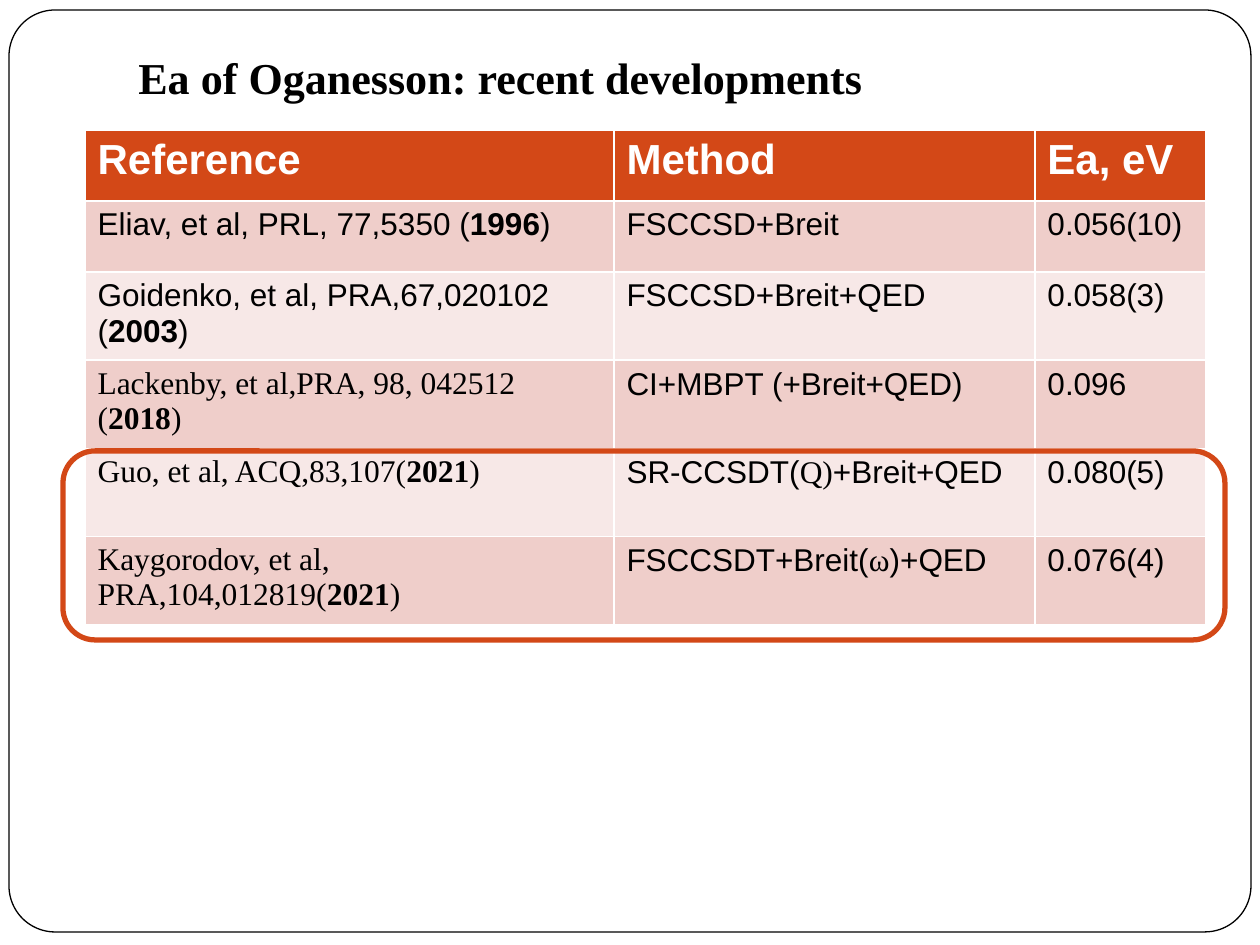
from pptx import Presentation
from pptx.dml.color import RGBColor
from pptx.enum.shapes import MSO_SHAPE as SHAPE
from pptx.enum.text import MSO_ANCHOR as ANCHOR
from pptx.util import Pt

PX = 914400 // 126
BLACK = RGBColor(0x00, 0x00, 0x00)
WHITE = RGBColor(0xFF, 0xFF, 0xFF)
ORANGE = RGBColor(0xD3, 0x48, 0x17)
ROSE = RGBColor(0xEF, 0xCE, 0xCA)
PALE = RGBColor(0xF7, 0xE8, 0xE7)
SANS, SERIF = "Arial", "Times New Roman"

HEADERS = ["Reference", "Method", "Ea, eV"]
ROWS = [
    (SANS, "Eliav, et al, PRL, 77,5350 (", "1996", ["FSCCSD+Breit"], "0.056(10)"),
    (SANS, "Goidenko, et al, PRA,67,020102 (", "2003", ["FSCCSD+Breit+QED"], "0.058(3)"),
    (SERIF, "Lackenby, et al,PRA, 98, 042512 (", "2018", ["CI+MBPT (+Breit+QED)"], "0.096"),
    (SERIF, "Guo, et al, ACQ,83,107(", "2021", ["SR-CCSDT(", "Q)", "+Breit+QED"], "0.080(5)"),
    (SERIF, "Kaygorodov, et al, PRA,104,012819(", "2021", ["FSCCSDT+Breit(", "ω", ")+QED"], "0.076(4)"),
]


def add_frame(x, y, w, h, radius, color, width):
    sp = s.shapes.add_shape(SHAPE.ROUNDED_RECTANGLE, x * PX, y * PX, w * PX, h * PX)
    sp.shadow.inherit = False
    sp.adjustments[0] = radius
    sp.fill.background()
    sp.line.color.rgb = color
    sp.line.width = Pt(width)
    return sp


def set_font(p, name, size, color, bold=False):
    p.font.name = name
    p.font.size = Pt(size)
    p.font.bold = bold
    p.font.color.rgb = color


prs = Presentation()
prs.slide_width, prs.slide_height = 1260 * PX, 945 * PX
s = prs.slides.add_slide(prs.slide_layouts[6])

border = add_frame(9, 10, 1242, 922, 0.05, BLACK, 0.75)
border.fill.solid()
border.fill.fore_color.rgb = WHITE

title = s.shapes.add_textbox(126 * PX, 38 * PX, 1071 * PX, 78 * PX)
tf = title.text_frame
tf.word_wrap = True
tf.vertical_anchor = ANCHOR.BOTTOM
tf.margin_bottom = 13 * PX
p = tf.paragraphs[0]
p.text = "Ea of Oganesson: recent developments"
set_font(p, SERIF, 25.2, BLACK, True)

widths = [529, 421, 171]
heights = [71, 71, 88, 88, 88, 88]
table = s.shapes.add_table(
    len(heights), len(widths), 85 * PX, 130 * PX, sum(widths) * PX, sum(heights) * PX
).table
for column, width in zip(table.columns, widths):
    column.width = width * PX
for row, height in zip(table.rows, heights):
    row.height = height * PX

for cell, text in zip(table.rows[0].cells, HEADERS):
    cell.fill.solid()
    cell.fill.fore_color.rgb = ORANGE
    p = cell.text_frame.paragraphs[0]
    p.text = text
    set_font(p, SANS, 24, WHITE, True)

for i, (font, source, year, method, value) in enumerate(ROWS, 1):
    cells = table.rows[i].cells
    for cell, name, parts in zip(cells, [font, SANS, SANS], [[source, year, ")"], method, [value]]):
        cell.fill.solid()
        cell.fill.fore_color.rgb = ROSE if i % 2 else PALE
        p = cell.text_frame.paragraphs[0]
        set_font(p, name, 18, BLACK)
        for part in parts:
            r = p.add_run()
            r.text = part
            if part == year:
                r.font.bold = True
            elif part in ("Q)", "ω"):
                r.font.name = SERIF

add_frame(63, 451, 1162, 189, 0.17, ORANGE, 3)

prs.save("out.pptx")
